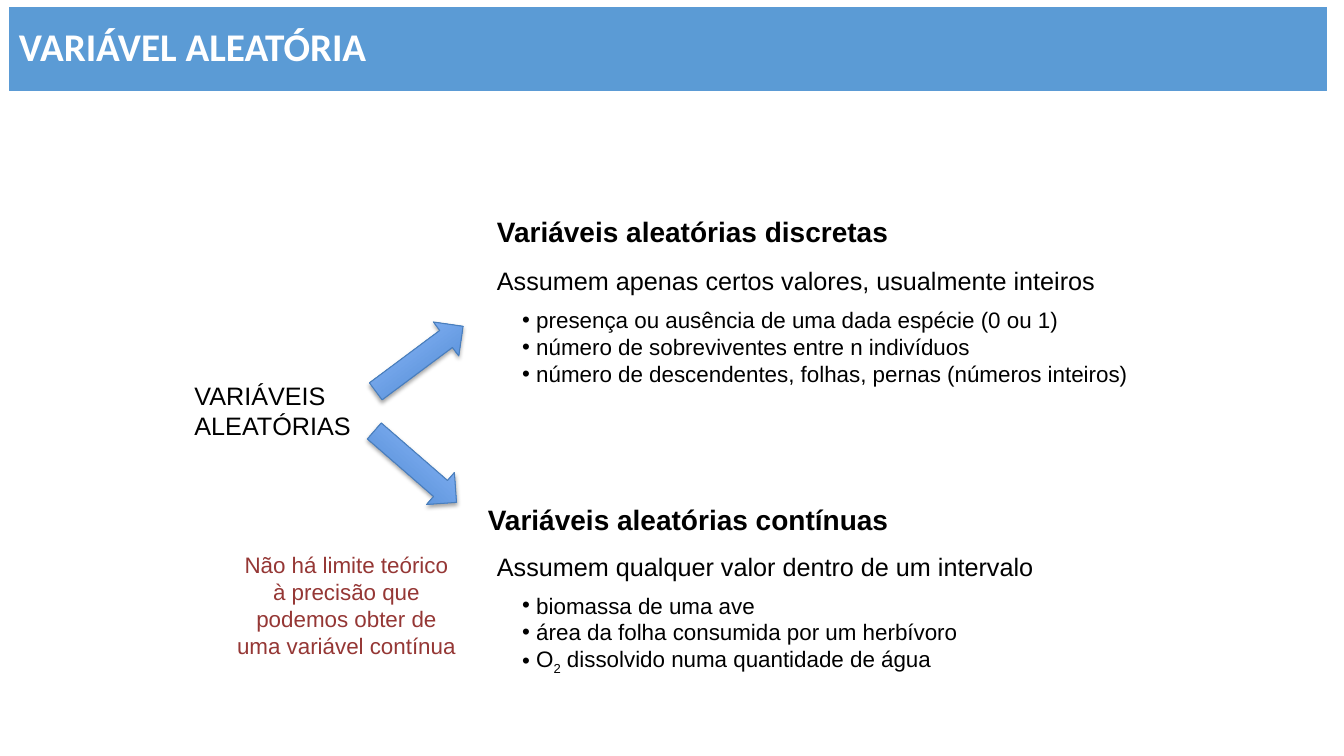
from lxml import etree
from pptx import Presentation
from pptx.dml.color import RGBColor
from pptx.enum.shapes import MSO_SHAPE as Preset
from pptx.enum.text import MSO_ANCHOR as Anchor, PP_ALIGN as Align
from pptx.oxml.ns import qn
from pptx.util import Inches, Pt

BLACK, WHITE, RED, BANNER = "000000", "FFFFFF", "953735", "5B9BD5"
ARROW_TOP, ARROW_BOTTOM, ARROW_EDGE = "9BC1FF", "3F80CD", "4A7EBB"
HEADING = {"size": Pt(20), "bold": True}
BODY = {"size": Pt(18)}
SMALL = {"size": Pt(16)}
BULLET_INDENT = Inches(0.14)


def rgb(value):
    return RGBColor.from_string(value)


def box(left, top, width, height):
    return [Inches(length) for length in (left, top, width, height)]


def write(paragraph, text, style, color=BLACK):
    run = paragraph.add_run()
    run.text = text
    for name, value in {"name": "Arial", **style}.items():
        setattr(run.font, name, value)
    run.font.color.rgb = rgb(color)
    return run


def add_text(shapes, place, text, style, color=BLACK, align=Align.LEFT):
    frame = shapes.add_textbox(*box(*place)).text_frame
    frame.word_wrap = True
    paragraph = frame.paragraphs[0]
    paragraph.alignment = align
    write(paragraph, text, style, color)


def add_bullets(shapes, place, items):
    """Each item is a list of (text, is_subscript) pieces."""
    frame = shapes.add_textbox(*box(*place)).text_frame
    frame.word_wrap = True
    for index, pieces in enumerate(items):
        paragraph = frame.add_paragraph() if index else frame.paragraphs[0]
        props = paragraph._p.get_or_add_pPr()
        props.set("marL", str(BULLET_INDENT))
        props.set("indent", str(-BULLET_INDENT))
        etree.SubElement(props, qn("a:buFont"), typeface="Arial")
        etree.SubElement(props, qn("a:buChar"), char="•")
        for text, is_subscript in pieces:
            run = write(paragraph, text, SMALL)
            if is_subscript:
                run._r.get_or_add_rPr().set("baseline", "-25000")


def add_arrow(shapes, place, rotation):
    arrow = shapes.add_shape(Preset.RIGHT_ARROW, *box(*place))
    arrow.rotation = rotation
    arrow.fill.gradient()
    arrow.fill.gradient_angle = 270
    for stop, color in zip(arrow.fill.gradient_stops, (ARROW_TOP, ARROW_BOTTOM)):
        stop.color.rgb = rgb(color)
    arrow.line.color.rgb = rgb(ARROW_EDGE)
    arrow.line.width = Pt(0.75)
    # Soft shadow straight below
    arrow.shadow.inherit = False
    effects = arrow._element.spPr.find(qn("a:effectLst"))
    shadow = etree.SubElement(
        effects, qn("a:outerShdw"), blurRad=str(Pt(3.1)), dist=str(Pt(1.8)),
        dir="5400000", rotWithShape="0")
    shade = etree.SubElement(shadow, qn("a:srgbClr"), val=BLACK)
    etree.SubElement(shade, qn("a:alpha"), val="35000")


def add_branch(shapes, arrow_place, rotation, heading_place, heading):
    branch = shapes.add_group_shape().shapes
    add_arrow(branch, arrow_place, rotation)
    add_text(branch, heading_place, heading, HEADING)


def add_banner(shapes, place, text):
    banner = shapes.add_shape(Preset.RECTANGLE, *box(*place))
    banner.shadow.inherit = False
    banner.fill.solid()
    banner.fill.fore_color.rgb = rgb(BANNER)
    banner.line.color.rgb = rgb(BANNER)
    banner.line.width = Pt(0.75)
    banner.text_frame.vertical_anchor = Anchor.MIDDLE
    title = banner.text_frame.paragraphs[0]
    title.alignment = Align.LEFT
    title.line_spacing = 0.9
    write(title, text, {"name": "Calibri", "size": Pt(28), "bold": True}, WHITE)


def main():
    deck = Presentation()
    deck.slide_width, deck.slide_height = Inches(13.33), Inches(7.5)
    shapes = deck.slides.add_slide(deck.slide_layouts[6]).shapes

    # Root of the diagram
    add_text(shapes, (1.83, 3.72, 2.17, 0.71), "VARIÁVEIS ALEATÓRIAS", BODY)

    # Discrete variables
    add_branch(shapes, (3.62, 3.35, 1.08, 0.42), 323.3,
               (4.83, 2.08, 6, 0.44), "Variáveis aleatórias discretas")
    add_text(shapes, (4.83, 2.58, 8.19, 0.4),
             "Assumem apenas certos valores, usualmente inteiros", BODY)
    add_bullets(shapes, (5.08, 2.99, 6.58, 0.91), [
        [("presença ou ausência de uma dada espécie (0 ou 1)", False)],
        [("número de sobreviventes entre n indivíduos", False)],
        [("número de descendentes, folhas, pernas (números inteiros)", False)],
    ])

    # Continuous variables
    add_branch(shapes, (3.58, 4.42, 1.08, 0.42), 41,
               (4.74, 4.94, 6, 0.44), "Variáveis aleatórias contínuas")
    add_text(shapes, (4.83, 5.42, 6, 0.4),
             "Assumem qualquer valor dentro de um intervalo", BODY)
    add_bullets(shapes, (5.08, 5.82, 5.42, 0.91), [
        [("biomassa de uma ave", False)],
        [("área da folha consumida por um herbívoro", False)],
        [("O", False), ("2", True),
         (" dissolvido numa quantidade de água", False)],
    ])

    # Side remark
    add_text(shapes, (2.24, 5.42, 2.39, 1.45),
             "Não há limite teórico à precisão que podemos obter de "
             "uma variável contínua", SMALL, RED, Align.CENTER)

    # Title banner
    add_banner(shapes, (0.09, 0.07, 13.07, 0.83), "VARIÁVEL ALEATÓRIA")

    deck.save("out.pptx")


if __name__ == "__main__":
    main()
